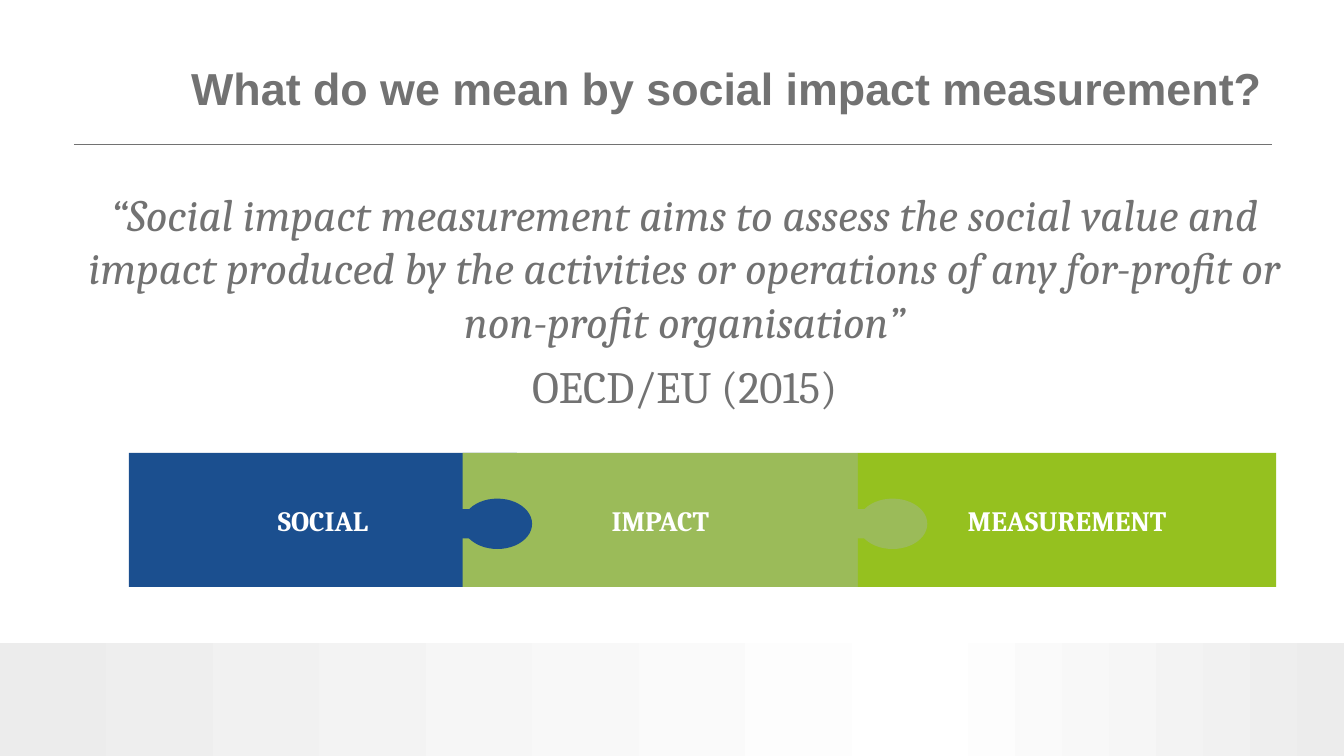
from pptx import Presentation
from pptx.dml.color import RGBColor
from pptx.enum.shapes import MSO_CONNECTOR, MSO_SHAPE as Preset
from pptx.enum.text import MSO_ANCHOR as Anchor, PP_ALIGN as Align
from pptx.oxml.ns import qn
from pptx.util import Cm, Pt
from lxml.etree import SubElement

COLORS = {
    "gray": "727272",
    "white": "FFFFFF",
    "footer": "ECECEC",
    "blue": "1B4F8F",
    "sage": "9BBB59",
    "lime": "95C11F",
}
TITLE = "What do we mean by social impact measurement?"
QUOTE = (
    "“Social impact measurement aims to assess the social value and impact "
    "produced by the activities or operations of any for-profit or "
    "non-profit organisation”"
)
CITATION = "OECD/EU (2015)"
PIECES = [
    ("SOCIAL", "blue", 3.25, 9.78),
    ("IMPACT", "sage", 11.66, 9.96),
    ("MEASUREMENT", "lime", 21.62, 10.54),
]
FOOTER_BANDS = [
    (23.22, 10.65, ("white", "footer")),
    (0, 24.15, ("footer", "white")),
]
PIECE_TOP, PIECE_HEIGHT = 11.41, 3.38
KNOB_WIDTH, KNOB_HEIGHT = 1.75, 1.27
NECK_WIDTH, NECK_HEIGHT, NECK_INSET = 3.58, 0.74, 1.96
FOOTER_TOP, FOOTER_HEIGHT = 16.2, 2.85


def color(name):
    return RGBColor.from_string(COLORS[name])


def set_font(paragraph, name, size, color_name, bold=False, italic=False):
    font = paragraph.font
    font.name, font.size = name, Pt(size)
    font.bold, font.italic = bold, italic
    font.color.rgb = color(color_name)


def add_shape(slide, preset, left, top, width, height, fill=None):
    shape = slide.shapes.add_shape(preset, Cm(left), Cm(top), Cm(width), Cm(height))
    shape.shadow.inherit = False
    shape.line.fill.background()
    if fill:
        shape.fill.solid()
        shape.fill.fore_color.rgb = color(fill)
    return shape


def add_text_frame(slide, left, top, width, height):
    box = slide.shapes.add_textbox(Cm(left), Cm(top), Cm(width), Cm(height))
    box.text_frame.word_wrap = True
    return box.text_frame


def add_footer(slide):
    for left, width, stops in FOOTER_BANDS:
        band = add_shape(slide, Preset.RECTANGLE, left, FOOTER_TOP, width, FOOTER_HEIGHT)
        band.fill.gradient()
        band.fill.gradient_angle = 0
        for stop, name in zip(band.fill.gradient_stops, stops):
            stop.color.rgb = color(name)


def add_heading(slide):
    rule = slide.shapes.add_connector(
        MSO_CONNECTOR.STRAIGHT, Cm(1.86), Cm(3.63), Cm(32.06), Cm(3.63)
    )
    rule.line.color.rgb = color("gray")
    rule.line.width = Pt(0.5)
    SubElement(rule._element.spPr, qn("a:effectLst"))

    frame = add_text_frame(slide, 4.57, 1.3, 28.6, 1.83)
    frame.vertical_anchor = Anchor.MIDDLE
    frame.text = TITLE
    set_font(frame.paragraphs[0], "Arial", 32, "gray", bold=True)


def add_quote(slide):
    frame = add_text_frame(slide, 1.83, 4.57, 30.86, 6.2)
    frame.text = QUOTE
    quote, citation = frame.paragraphs[0], frame.add_paragraph()
    citation.text = CITATION
    citation.space_before = Pt(7.7)
    for paragraph, italic in ((quote, True), (citation, False)):
        paragraph.alignment = Align.CENTER
        set_font(paragraph, "Cambria", 32, "gray", italic=italic)


def add_puzzle(slide):
    for label, fill, left, width in PIECES:
        piece = add_shape(slide, Preset.RECTANGLE, left, PIECE_TOP, width, PIECE_HEIGHT, fill)
        frame = piece.text_frame
        frame.vertical_anchor = Anchor.MIDDLE
        frame.text = label
        paragraph = frame.paragraphs[0]
        paragraph.alignment = Align.CENTER
        set_font(paragraph, "Cambria", 20, "white", bold=True)

    knob_middle = PIECE_TOP + PIECE_HEIGHT / 2 + 0.1
    for piece, following in zip(PIECES, PIECES[1:]):
        fill, joint = piece[1], following[2]
        for preset, left, width, height in (
            (Preset.FLOWCHART_TERMINATOR, joint - NECK_INSET, NECK_WIDTH, NECK_HEIGHT),
            (Preset.OVAL, joint, KNOB_WIDTH, KNOB_HEIGHT),
        ):
            add_shape(slide, preset, left, knob_middle - height / 2, width, height, fill)


def main():
    presentation = Presentation()
    presentation.slide_width, presentation.slide_height = Cm(33.87), Cm(19.05)
    slide = presentation.slides.add_slide(presentation.slide_layouts[6])
    add_footer(slide)
    add_heading(slide)
    add_quote(slide)
    add_puzzle(slide)
    presentation.save("out.pptx")


if __name__ == "__main__":
    main()
